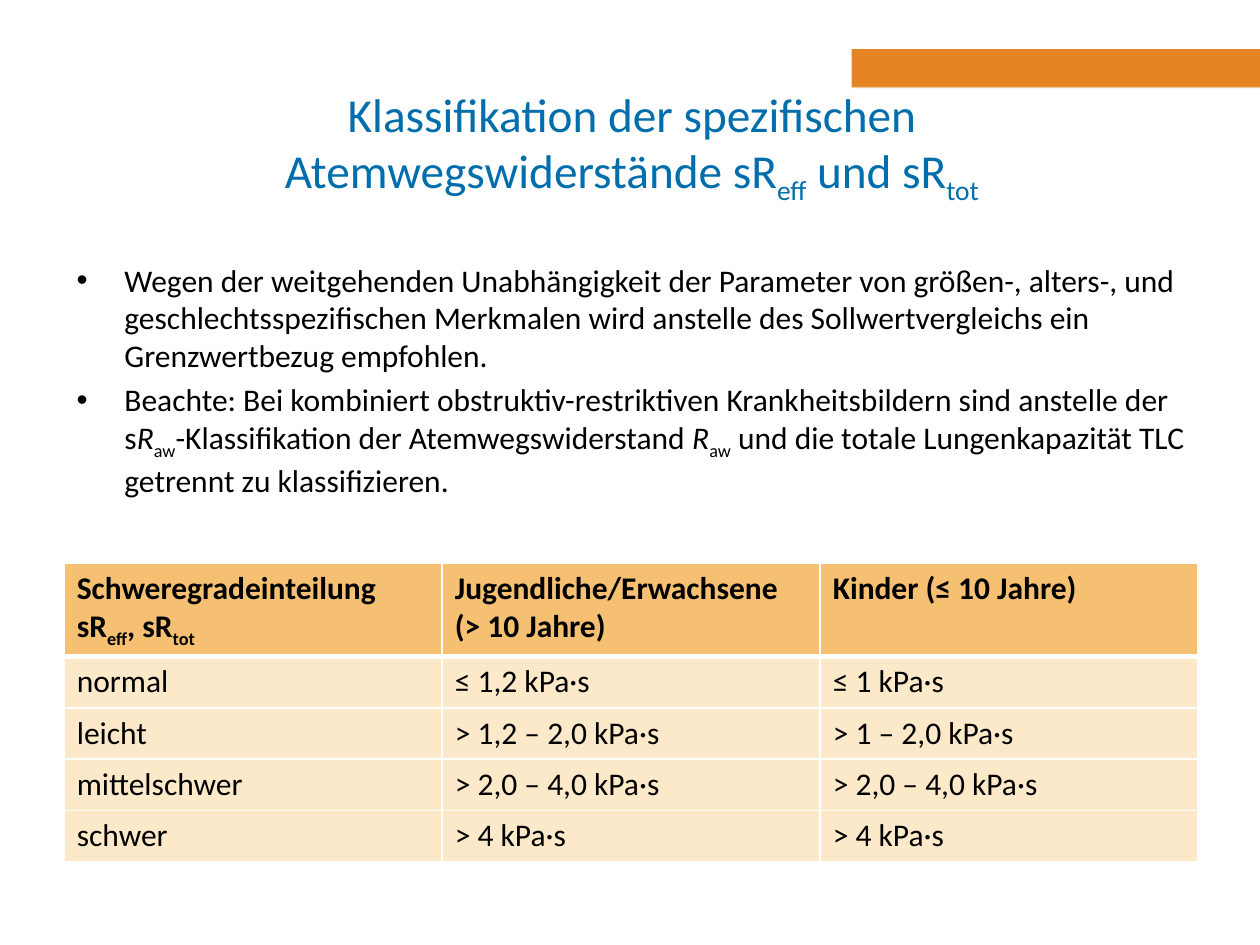
import dataclasses

import pptx
import pptx.dml.color
import pptx.enum.shapes
import pptx.enum.text
import pptx.oxml.ns
import pptx.util
from lxml import etree


@dataclasses.dataclass(frozen=True)
class Theme:
    font: str = "Calibri"
    title_size: int = 27
    text_size: int = 18
    title: str = "006EAC"
    text: str = "000000"
    accent: str = "E68323"
    header: str = "F5C071"
    row: str = "FBE9C9"
    white: str = "FFFFFF"


SUBSCRIPT, ITALIC = "subscript", "italic"
WIDTH, HEIGHT = 10, 7.5


def rgb(color):
    return pptx.dml.color.RGBColor.from_string(color)


def add_element(parent, tag, **attributes):
    return etree.SubElement(parent, pptx.oxml.ns.qn(tag), attributes)


class SlideBuilder:
    """Holds the theme and the current slide; lengths are shares of the slide."""

    def __init__(self, presentation, theme):
        self.theme = theme
        self.presentation = presentation
        self.slide = presentation.slides.add_slide(presentation.slide_layouts[6])

    def place(self, left, top, width, height):
        across, down = self.presentation.slide_width, self.presentation.slide_height
        return [round(share * full) for share, full in
                zip((left, top, width, height), (across, down, across, down))]

    def add_runs(self, paragraph, parts, size, color, bold=False):
        """Fill a paragraph with plain strings and (text, style) pairs."""
        for part in parts:
            text, style = (part, None) if isinstance(part, str) else part
            run = paragraph.add_run()
            run.text = text
            run.font.name = self.theme.font
            run.font.size = pptx.util.Pt(size)
            run.font.color.rgb = rgb(color)
            run.font.bold = bold
            run.font.italic = style == ITALIC
            if style == SUBSCRIPT:
                run.font._element.set("baseline", "-25000")

    def band(self, box, color, opacity=100):
        shape = self.slide.shapes.add_shape(
            pptx.enum.shapes.MSO_SHAPE.RECTANGLE, *self.place(*box))
        shape.shadow.inherit = False
        shape.fill.solid()
        shape.fill.fore_color.rgb = rgb(color)
        shape.line.fill.background()
        if opacity < 100:
            color_element = shape._element.spPr.find(".//" + pptx.oxml.ns.qn("a:srgbClr"))
            add_element(color_element, "a:alpha", val=str(opacity * 1000))

    def text_frame(self, box):
        frame = self.slide.shapes.add_textbox(*self.place(*box)).text_frame
        frame.word_wrap = True
        return frame

    def title(self, box, parts):
        frame = self.text_frame(box)
        frame.vertical_anchor = pptx.enum.text.MSO_ANCHOR.MIDDLE
        paragraph = frame.paragraphs[0]
        paragraph.alignment = pptx.enum.text.PP_ALIGN.CENTER
        self.add_runs(paragraph, parts, self.theme.title_size, self.theme.title)

    def bullets(self, box, items):
        frame = self.text_frame(box)
        indent = pptx.util.Inches(0.38)
        for index, parts in enumerate(items):
            paragraph = frame.add_paragraph() if index else frame.paragraphs[0]
            properties = paragraph._p.get_or_add_pPr()
            properties.set("marL", str(indent))
            properties.set("indent", str(-indent))
            add_element(properties, "a:buFont", typeface="Arial")
            add_element(properties, "a:buChar", char="•")
            if index:
                paragraph.space_before = pptx.util.Pt(0.2 * self.theme.text_size)
            self.add_runs(paragraph, parts, self.theme.text_size, self.theme.text)

    def borders(self, cell, widths):
        properties = cell._tc.get_or_add_tcPr()
        for position, (side, width) in enumerate(widths.items()):
            line = etree.Element(pptx.oxml.ns.qn(f"a:ln{side}"),
                                 {"w": str(pptx.util.Pt(width))})
            fill = add_element(line, "a:solidFill")
            add_element(fill, "a:srgbClr", val=self.theme.white)
            properties.insert(position, line)

    def table(self, box, rows, header_share):
        """Each cell is a list of paragraphs; the first row is the header."""
        frame = self.slide.shapes.add_table(len(rows), len(rows[0]), *self.place(*box))
        table = frame.table
        header_height = round(frame.height * header_share)
        row_height = (frame.height - header_height) // (len(rows) - 1)
        for row_index, row in enumerate(rows):
            is_header = row_index == 0
            table.rows[row_index].height = header_height if is_header else row_height
            for column_index, paragraphs in enumerate(row):
                cell = table.cell(row_index, column_index)
                cell.fill.solid()
                cell.fill.fore_color.rgb = rgb(self.theme.header if is_header else self.theme.row)
                self.borders(cell, {"L": 1, "R": 1, "T": 3 if row_index == 1 else 1,
                                    "B": 3 if is_header else 1})
                for index, parts in enumerate(paragraphs):
                    paragraph = (cell.text_frame.add_paragraph() if index
                                 else cell.text_frame.paragraphs[0])
                    self.add_runs(paragraph, parts, self.theme.text_size,
                                  self.theme.text, bold=is_header)


def main():
    presentation = pptx.Presentation()
    presentation.slide_width = pptx.util.Inches(WIDTH)
    presentation.slide_height = pptx.util.Inches(HEIGHT)
    theme = Theme()
    builder = SlideBuilder(presentation, theme)
    margin, content_width = 0.051, 0.9

    # Accent bar and translucent title band
    builder.band((0.676, 0.39 / HEIGHT, 0.324, 0.31 / HEIGHT), theme.accent)
    title_top, title_height = 0.69 / HEIGHT, 0.93 / HEIGHT
    builder.band((0, title_top, 1, title_height), theme.white, opacity=55)

    # Title
    builder.title((0.148, title_top, 0.707, title_height), [
        "Klassifikation der spezifischen Atemwegswiderstände sR", ("eff", SUBSCRIPT),
        " und sR", ("tot", SUBSCRIPT)])

    # Bullet points
    resistance = [("R", ITALIC), ("aw", SUBSCRIPT)]
    builder.bullets((margin, 2.02 / HEIGHT, content_width, 1.97 / HEIGHT), [
        ["Wegen der weitgehenden Unabhängigkeit der Parameter von größen-, alters-, und "
         "geschlechtsspezifischen Merkmalen wird anstelle des Sollwertvergleichs ein "
         "Grenzwertbezug empfohlen."],
        ["Beachte: Bei kombiniert obstruktiv-restriktiven Krankheitsbildern sind "
         "anstelle der s", *resistance, "-Klassifikation der Atemwegswiderstand ",
         *resistance, " und die totale Lungenkapazität TLC getrennt zu klassifizieren."]])

    # Severity table
    header = [
        [["Schweregradeinteilung"],
         ["sR", ("eff", SUBSCRIPT), ", sR", ("tot", SUBSCRIPT)]],
        [["Jugendliche/Erwachsene"], ["(> 10 Jahre)"]],
        [["Kinder (≤ 10 Jahre)"]]]
    grades = [
        ("normal", "≤ 1,2 kPa·s", "≤ 1 kPa·s"),
        ("leicht", "> 1,2 – 2,0 kPa·s", "> 1 – 2,0 kPa·s"),
        ("mittelschwer", "> 2,0 – 4,0 kPa·s", "> 2,0 – 4,0 kPa·s"),
        ("schwer", "> 4 kPa·s", "> 4 kPa·s")]
    body = [[[[text]] for text in grade] for grade in grades]
    builder.table((margin, 4.47 / HEIGHT, content_width, 2.36 / HEIGHT),
                  [header, *body], header_share=0.31)

    presentation.save("out.pptx")


if __name__ == "__main__":
    main()
